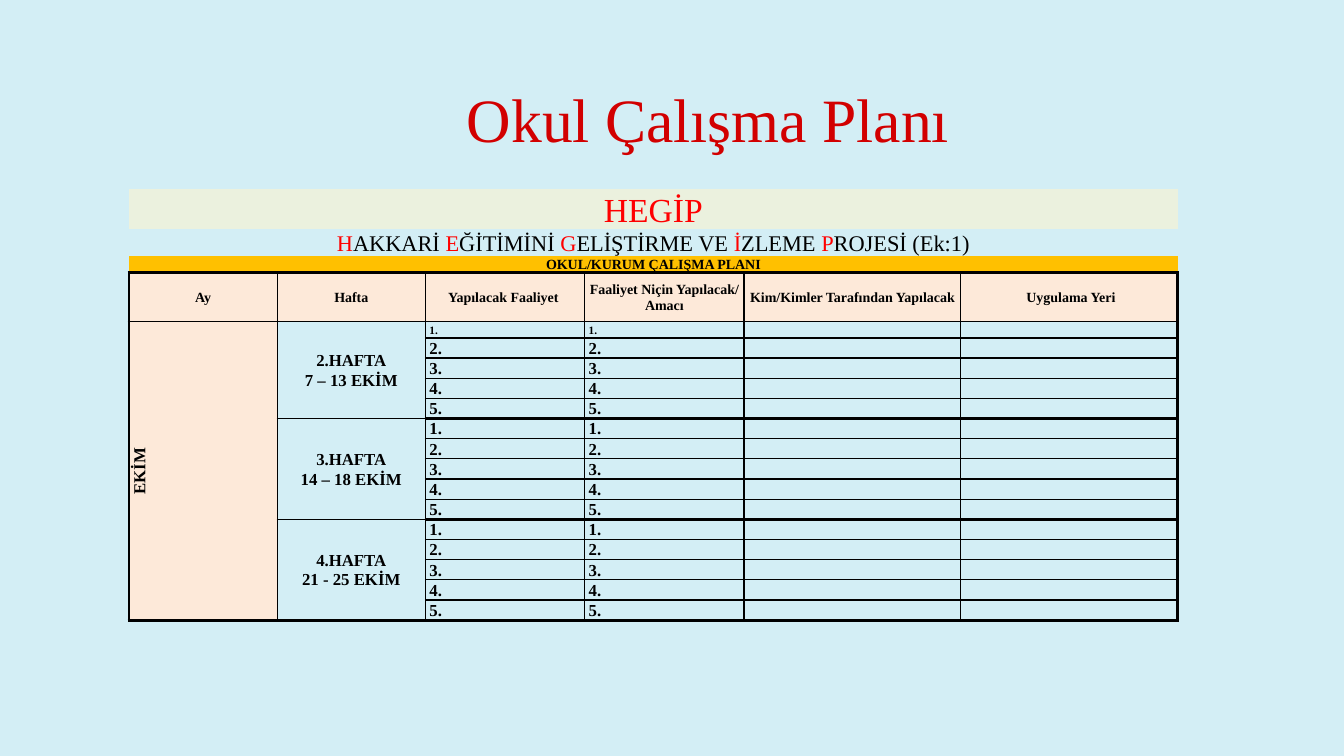
from dataclasses import dataclass
from typing import Optional

from lxml import etree
from pptx import Presentation
from pptx.dml.color import RGBColor
from pptx.enum.text import MSO_ANCHOR, PP_ALIGN
from pptx.oxml.ns import qn
from pptx.util import Inches, Pt

CENTER, LEFT = PP_ALIGN.CENTER, PP_ALIGN.LEFT
MIDDLE = MSO_ANCHOR.MIDDLE

FONT = "Times New Roman"
SKY = RGBColor(0xD3, 0xEE, 0xF5)
DARK_RED = RGBColor(0xD2, 0x00, 0x00)
RED = RGBColor(0xFF, 0x00, 0x00)
BLACK = RGBColor(0x00, 0x00, 0x00)
SAGE = RGBColor(0xEB, 0xF1, 0xDE)
AMBER = RGBColor(0xFF, 0xC0, 0x00)
PEACH = RGBColor(0xFD, 0xE9, 0xD9)

THIN, THICK = 1, 2.25
HEADER_ROW, FIRST_TASK_ROW, TASKS = 3, 4, 5
COL_WIDTHS = [1.47, 1.47, 1.58, 1.58, 2.15, 2.15]
ROW_HEIGHTS = [0.39, 0.26, 0.16, 0.49, 0.16] + [0.2] * 14
N_ROWS, N_COLS = len(ROW_HEIGHTS), len(COL_WIDTHS)
WEEK_LINES = range(FIRST_TASK_ROW, N_ROWS + 1, TASKS)


@dataclass
class Run:
    text: str
    color: RGBColor = BLACK


@dataclass
class Entry:
    row: int
    col: int
    lines: list[list[Run]]
    size: float = 12
    bold: bool = True
    align: PP_ALIGN = CENTER
    fill: Optional[RGBColor] = None
    rows: int = 1
    cols: int = 1


HEADERS = ["Ay", "Hafta", "Yapılacak Faaliyet ", "Faaliyet Niçin Yapılacak/ Amacı",
           "Kim/Kimler Tarafından Yapılacak", " Uygulama Yeri"]
WEEKS = [("2.HAFTA", "7 – 13 EKİM"), ("3.HAFTA", "14 – 18 EKİM"),
         ("4.HAFTA", "21 - 25 EKİM")]
PROJECT = [("H", "AKKARİ "), ("E", "ĞİTİMİNİ "), ("G", "ELİŞTİRME VE "),
           ("İ", "ZLEME "), ("P", "ROJESİ (Ek:1)")]


def plan_entries() -> list[Entry]:
    project = [run for initial, rest in PROJECT for run in (Run(initial, RED), Run(rest))]
    entries = [
        Entry(0, 0, [[Run("HEGİP", RED)]], 24, False, fill=SAGE, cols=N_COLS),
        Entry(1, 0, [project], 16, False, cols=N_COLS),
        Entry(2, 0, [[Run("OKUL/KURUM ÇALIŞMA PLANI")]], 10, fill=AMBER, cols=N_COLS),
        Entry(FIRST_TASK_ROW, 0, [[Run("EKİM")]], fill=PEACH, rows=len(WEEKS) * TASKS),
    ]
    entries += [Entry(HEADER_ROW, col, [[Run(text)]], 10, fill=PEACH)
                for col, text in enumerate(HEADERS)]
    for top, week in zip(WEEK_LINES, WEEKS):
        entries.append(Entry(top, 1, [[Run(line)] for line in week], rows=TASKS))
        for task in range(TASKS):
            row = top + task
            size = 8 if row == FIRST_TASK_ROW else 12
            entries += [Entry(row, col, [[Run(f"{task + 1}.")]], size, align=LEFT)
                        for col in (2, 3)]
            entries += [Entry(row, col, [[]], 8) for col in (4, 5)]
    return entries


def horizontal_line(line: int, col: int) -> float:
    """Width of the rule above row number `line`."""
    if line < HEADER_ROW:
        return 0
    if line in (HEADER_ROW, N_ROWS):
        return THICK
    if line == FIRST_TASK_ROW:
        return THIN
    if col == 0:
        return 0
    if col == 1:
        return THIN if line in WEEK_LINES else 0
    return THICK if line in WEEK_LINES else THIN


def vertical_line(line: int, row: int) -> float:
    """Width of the rule left of column number `line`."""
    if row < HEADER_ROW:
        return 0
    return THICK if line in (0, N_COLS) else THIN


def add_borders(cell, widths: dict[str, float]) -> None:
    tc_pr = cell._tc.get_or_add_tcPr()
    for tag, width in widths.items():
        ln = etree.SubElement(tc_pr, qn(f"a:{tag}"), w=str(int(Pt(width))))
        if width:
            solid = etree.SubElement(ln, qn("a:solidFill"))
            etree.SubElement(solid, qn("a:srgbClr"), val=str(BLACK))
        else:
            etree.SubElement(ln, qn("a:noFill"))


def style_cell(cell, row: int, col: int, entry: Entry) -> None:
    origin = (row, col) == (entry.row, entry.col)
    bottom = row + (entry.rows if origin else 1)
    right = col + (entry.cols if origin else 1)
    add_borders(cell, {
        "lnL": vertical_line(col, row), "lnR": vertical_line(right, row),
        "lnT": horizontal_line(row, col), "lnB": horizontal_line(bottom, col)})
    if entry.fill is None:
        cell.fill.background()
    else:
        cell.fill.solid()
        cell.fill.fore_color.rgb = entry.fill
    cell.vertical_anchor = MIDDLE
    cell.margin_left = cell.margin_right = Inches(0.04)
    cell.margin_top = cell.margin_bottom = 0


def write_cell(cell, entry: Entry) -> None:
    tf = cell.text_frame
    for i, line in enumerate(entry.lines):
        p = tf.add_paragraph() if i else tf.paragraphs[0]
        p.alignment = entry.align
        p.line_spacing = 1.07
        for run in line:
            r = p.add_run()
            r.text = run.text
            r.font.name = FONT
            r.font.size = Pt(entry.size)
            r.font.bold = entry.bold
            r.font.color.rgb = run.color
        if not line:  # keeps empty rows low
            etree.SubElement(p._p, qn("a:endParaRPr"), sz=str(int(entry.size * 100)))


def add_plan_table(slide) -> None:
    frame = slide.shapes.add_table(N_ROWS, N_COLS, Inches(1.28), Inches(1.88),
                                   Inches(sum(COL_WIDTHS)), Inches(sum(ROW_HEIGHTS)))
    table = frame.table
    table.first_row = table.horz_banding = False
    for column, width in zip(table.columns, COL_WIDTHS):
        column.width = Inches(width)
    for table_row, height in zip(table.rows, ROW_HEIGHTS):
        table_row.height = Inches(height)

    for entry in plan_entries():
        cell = table.cell(entry.row, entry.col)
        last_row, last_col = entry.row + entry.rows - 1, entry.col + entry.cols - 1
        if entry.rows * entry.cols > 1:
            cell.merge(table.cell(last_row, last_col))
        for row in range(entry.row, last_row + 1):
            for col in range(entry.col, last_col + 1):
                style_cell(table.cell(row, col), row, col, entry)
        write_cell(cell, entry)

    # The month reads upwards
    table.cell(FIRST_TASK_ROW, 0)._tc.get_or_add_tcPr().set("vert", "vert270")


def add_title(slide) -> None:
    title = slide.shapes.title
    title.left, title.top = Inches(4.53), Inches(0.75)
    title.width, title.height = Inches(5.89), Inches(0.84)
    tf = title.text_frame
    tf.word_wrap = True
    tf.vertical_anchor = MIDDLE
    p = tf.paragraphs[0]
    p.alignment = LEFT
    r = p.add_run()
    r.text = "Okul Çalışma Planı"
    r.font.name = FONT
    r.font.size = Pt(44)
    r.font.color.rgb = DARK_RED


def main() -> None:
    prs = Presentation()
    prs.slide_width, prs.slide_height = Inches(13.33), Inches(7.5)
    slide = prs.slides.add_slide(prs.slide_layouts[5])
    slide.background.fill.solid()
    slide.background.fill.fore_color.rgb = SKY
    add_title(slide)
    add_plan_table(slide)
    prs.save("out.pptx")


if __name__ == "__main__":
    main()
